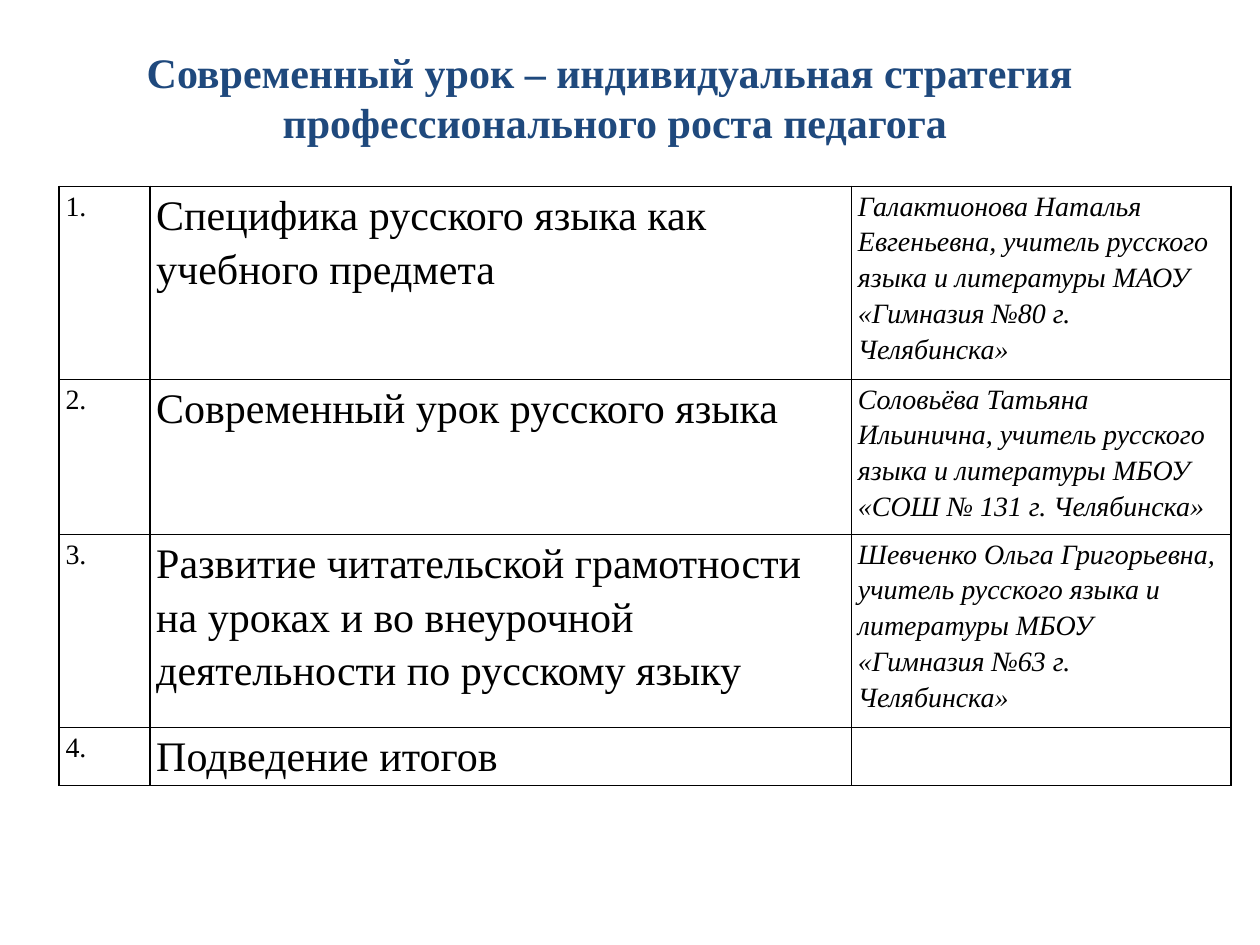
from lxml.etree import SubElement
from pptx import Presentation
from pptx.dml.color import RGBColor
from pptx.enum.text import MSO_ANCHOR, MSO_AUTO_SIZE, PP_ALIGN
from pptx.oxml.ns import qn
from pptx.util import Inches, Pt

FONT = "Times New Roman"
TITLE = ["Современный урок – индивидуальная стратегия ",
         "профессионального роста педагога"]
COL_WIDTHS = [0.72, 5.57, 3.01]
ROW_HEIGHTS = [1.53, 1.23, 1.53, 0.46]
COL_STYLES = [(16, False), (24, False), (16, True)]
AGENDA = [
    ("Специфика русского языка как учебного предмета",
     "Галактионова Наталья Евгеньевна, учитель русского языка и литературы "
     "МАОУ «Гимназия №80 г. Челябинска»"),
    ("Современный урок русского языка",
     "Соловьёва Татьяна Ильинична, учитель русского языка и литературы "
     "МБОУ «СОШ № 131 г. Челябинска»"),
    ("Развитие читательской грамотности на уроках и во внеурочной "
     "деятельности по русскому языку",
     "Шевченко Ольга Григорьевна, учитель русского языка и литературы "
     "МБОУ «Гимназия №63 г. Челябинска»"),
    ("Подведение итогов", ""),
]


def rgb(color):
    return RGBColor.from_string(color)


def add_run(p, text, size, color, bold=False, italic=False):
    r = p.add_run()
    r.text = text
    r.font.name = FONT
    r.font.size = Pt(size)
    r.font.bold = bold
    r.font.italic = italic
    r.font.color.rgb = rgb(color)


def add_title(s):
    sp = s.shapes.add_textbox(Inches(1.02), Inches(0.31), Inches(7.72), Inches(0.91))
    tf = sp.text_frame
    tf.word_wrap = False
    tf.auto_size = MSO_AUTO_SIZE.SHAPE_TO_FIT_TEXT
    tf.vertical_anchor = MSO_ANCHOR.MIDDLE
    p = tf.paragraphs[0]
    p.alignment = PP_ALIGN.CENTER
    for i, line in enumerate(TITLE):
        if i:
            p.add_line_break()
        add_run(p, line, 24, "1F497D", bold=True)


def set_borders(cell, color, width):
    tc_pr = cell._tc.get_or_add_tcPr()
    for i, side in enumerate(("a:lnL", "a:lnR", "a:lnT", "a:lnB")):
        ln = SubElement(tc_pr, qn(side), w=str(Pt(width)))
        fill = SubElement(ln, qn("a:solidFill"))
        SubElement(fill, qn("a:srgbClr"), val=color)
        tc_pr.insert(i, ln)


def fill_cell(cell, text, size, italic):
    cell.fill.background()
    set_borders(cell, "000000", 1)
    cell.margin_left = cell.margin_right = Inches(0.05)
    cell.margin_top = cell.margin_bottom = 0
    p = cell.text_frame.paragraphs[0]
    p.line_spacing = 1.15
    if text:
        add_run(p, text, size, "000000", italic=italic)
    else:
        p.font.size = Pt(size)


def add_agenda(s):
    table = s.shapes.add_table(
        len(AGENDA), len(COL_WIDTHS), Inches(0.47), Inches(1.48),
        Inches(sum(COL_WIDTHS)), Inches(sum(ROW_HEIGHTS))).table
    table.first_row = table.horz_banding = False
    for column, width in zip(table.columns, COL_WIDTHS):
        column.width = Inches(width)
    for row, height in zip(table.rows, ROW_HEIGHTS):
        row.height = Inches(height)
    for i, (topic, speaker) in enumerate(AGENDA):
        texts = (f"{i + 1}.", topic, speaker)
        for j, (text, (size, italic)) in enumerate(zip(texts, COL_STYLES)):
            fill_cell(table.cell(i, j), text, size, italic)


def main():
    prs = Presentation()
    prs.slide_width = Inches(10)
    prs.slide_height = Inches(7.5)
    s = prs.slides.add_slide(prs.slide_layouts[6])
    add_title(s)
    add_agenda(s)
    prs.save("out.pptx")


if __name__ == "__main__":
    main()
